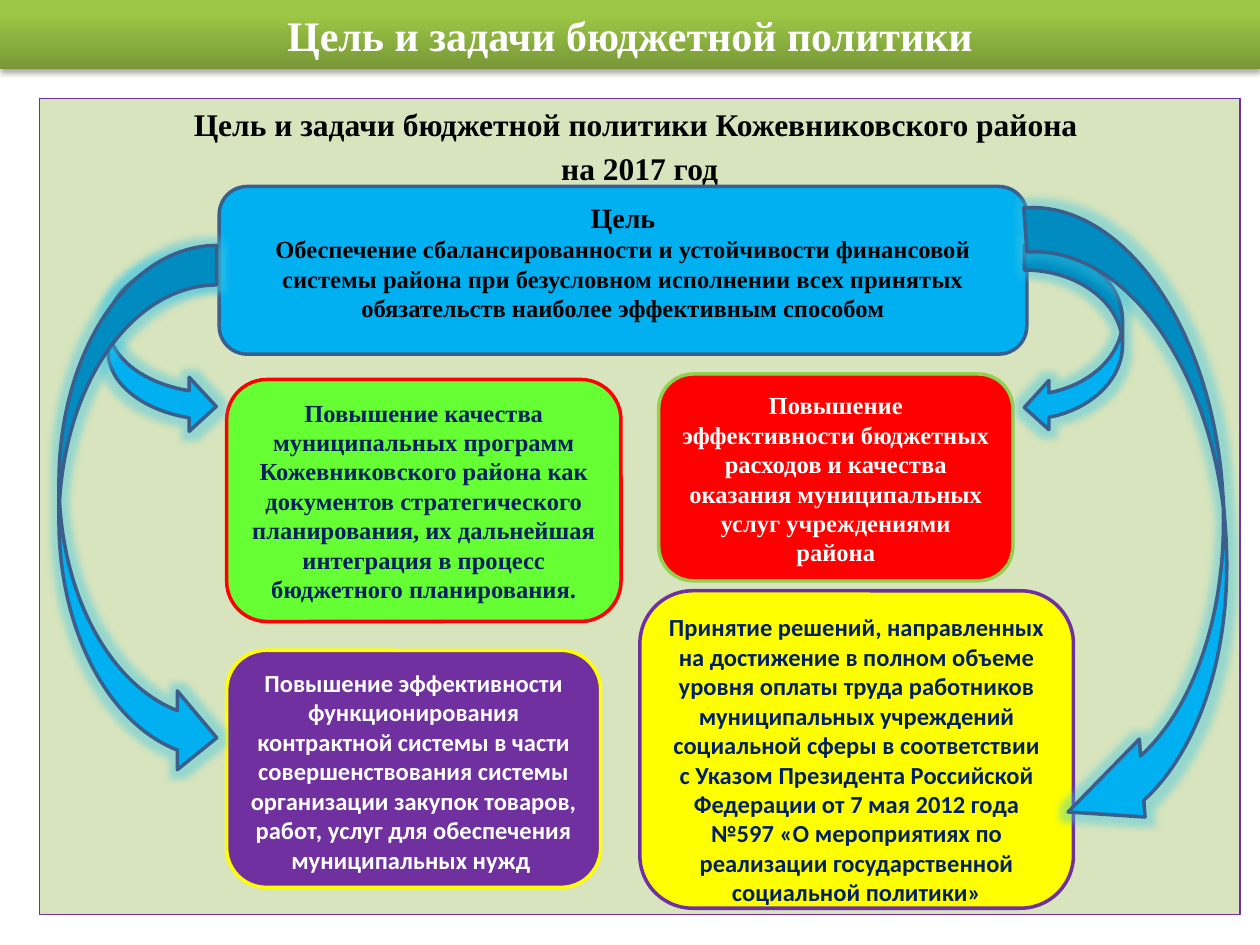
from lxml.etree import SubElement
from pptx import Presentation
from pptx.dml.color import RGBColor
from pptx.enum.shapes import MSO_SHAPE as Preset
from pptx.enum.text import MSO_ANCHOR as Anchor, MSO_AUTO_SIZE as AutoSize, PP_ALIGN as Align
from pptx.oxml.ns import qn
from pptx.util import Cm, Pt

# Theme: colours, fonts and type sizes
THEME = {
    "serif": "Times New Roman", "sans": "Calibri",
    "title": 24, "heading": 18, "goal": 16, "text": 14,
    "white": "FFFFFF", "black": "000000", "navy": "002060",
    "panel": "D7E4BD", "purple": "7030A0", "green": "66FF33", "lime": "92D050",
    "red": "FF0000", "yellow": "FFFF00", "blue": "00B0F0", "outline": "3A5F8C",
    "glow": "33C3E6", "bar_dark": "779737", "bar_light": "9DC746",
}

# Content: boxes are left, top, width, height in centimetres
TITLE = ("Цель и задачи бюджетной политики", (0, 0, 25.4, 1.4))
PANEL = (["Цель и задачи бюджетной политики Кожевниковского района ", "на 2017 год"],
         (0.79, 1.98, 24.21, 16.46))

# Cards: box, fill, line, font, text colour, anchor, [(text, size)]
CARDS = [
    ((4.57, 7.65, 7.95, 4.88), "green", "red", "serif", "navy", Anchor.MIDDLE,
     [("Повышение качества муниципальных программ Кожевниковского района как документов "
       "стратегического планирования, их дальнейшая интеграция в процесс бюджетного "
       "планирования.", "text")]),
    ((4.57, 13.11, 7.54, 4.78), "purple", "yellow", "sans", "white", Anchor.TOP,
     [("Повышение эффективности функционирования контрактной системы в части "
       "совершенствования системы организации закупок товаров, работ, услуг для "
       "обеспечения муниципальных нужд ", "text")]),
    ((13.28, 7.54, 7.14, 4.17), "red", "lime", "serif", "white", Anchor.TOP,
     [("Повышение эффективности бюджетных расходов и качества оказания муниципальных "
       "услуг учреждениями района", "text")]),
    ((12.9, 11.91, 8.74, 6.4), "yellow", "purple", "sans", "navy", Anchor.TOP,
     [("Принятие решений, направленных на достижение в полном объеме уровня оплаты труда "
       "работников муниципальных учреждений социальной сферы в соответствии с Указом "
       "Президента Российской Федерации от 7 мая 2012 года №597 «О мероприятиях по "
       "реализации государственной социальной политики»", "text")]),
    ((4.42, 3.76, 16.28, 3.38), "blue", "outline", "serif", "black", Anchor.TOP,
     [("Цель", "goal"),
      ("Обеспечение сбалансированности и устойчивости финансовой системы района при "
       "безусловном исполнении всех принятых обязательств наиболее эффективным способом",
       "text")]),
]

# Arrows: preset, box, rotation, adjustments
ARROWS = [
    (Preset.CURVED_LEFT_ARROW, (20.65, 4.95, 1.98, 3.76), 0, ()),
    (Preset.CURVED_LEFT_ARROW, (21.11, 4.04, 3.58, 13), 355.8, (0.25, 0.44, 0.43)),
    (Preset.CURVED_RIGHT_ARROW, (2.18, 5.16, 2.18, 3.58), 0, ()),
    (Preset.CURVED_RIGHT_ARROW, (1.19, 4.95, 3.18, 10.72), 0, ()),
]


def color(name):
    return RGBColor.from_string(THEME[name])


def place(shape, box):
    shape.left, shape.top, shape.width, shape.height = (Cm(value) for value in box)


def paint(shape, fill, line, width=2):
    shape.fill.solid()
    shape.fill.fore_color.rgb = color(fill)
    shape.line.color.rgb = color(line)
    shape.line.width = Pt(width)
    shape.shadow.inherit = False


def add_effect(shape, kind, color_name, alpha, **attributes):
    shape.shadow.inherit = False
    effects = shape._element.spPr.find(qn("a:effectLst"))
    effect = SubElement(effects, qn("a:" + kind), attributes)
    tint = SubElement(effect, qn("a:srgbClr"), val=THEME[color_name])
    SubElement(tint, qn("a:alpha"), val=str(alpha * 1000))


def write(shape, lines, font, text_color, anchor, space_before=0):
    frame = shape.text_frame
    frame.word_wrap = True
    frame.auto_size = AutoSize.NONE
    frame.vertical_anchor = anchor
    for index, (text, size) in enumerate(lines):
        paragraph = frame.add_paragraph() if index else frame.paragraphs[0]
        paragraph.alignment = Align.CENTER
        paragraph.space_before = Pt(space_before)
        run = paragraph.add_run()
        run.text = text
        run.font.name = THEME[font]
        run.font.size = Pt(THEME[size])
        run.font.bold = True
        run.font.color.rgb = color(text_color)


def main():
    presentation = Presentation()
    presentation.slide_width, presentation.slide_height = Cm(25.4), Cm(19.05)
    slide = presentation.slides.add_slide(presentation.slide_layouts[1])

    # Title bar
    title = slide.shapes.title
    text, box = TITLE
    place(title, box)
    title.fill.gradient()
    title.fill.gradient_angle = 90
    stops = zip(title.fill.gradient_stops, ((0, "bar_dark"), (0.8, "bar_light")))
    for stop, (position, name) in stops:
        stop.position = position
        stop.color.rgb = color(name)
    title.line.fill.background()
    add_effect(title, "outerShdw", "black", 35, blurRad=str(Pt(3.1)),
               dist=str(Pt(1.8)), dir="5400000", rotWithShape="0")
    write(title, [(text, "title")], "serif", "white", Anchor.MIDDLE)

    # Background panel with heading, without bullets
    panel = slide.placeholders[1]
    lines, box = PANEL
    place(panel, box)
    paint(panel, "panel", "purple", 0.75)
    write(panel, [(line, "heading") for line in lines], "serif", "black", Anchor.TOP, 3.6)
    for paragraph in panel.text_frame.paragraphs:
        properties = paragraph._p.get_or_add_pPr()
        properties.set("marL", "0")
        properties.set("indent", "0")
        SubElement(properties, qn("a:buNone"))

    # Goal and task cards
    for box, fill, line, font, text_color, anchor, lines in CARDS:
        card = slide.shapes.add_shape(Preset.ROUNDED_RECTANGLE, *map(Cm, box))
        paint(card, fill, line)
        write(card, lines, font, text_color, anchor)

    # Glowing arrows from the goal to the tasks
    for preset, box, rotation, adjustments in ARROWS:
        arrow = slide.shapes.add_shape(preset, *map(Cm, box))
        arrow.rotation = rotation
        for index, value in enumerate(adjustments):
            arrow.adjustments[index] = value
        paint(arrow, "blue", "outline")
        add_effect(arrow, "glow", "glow", 40, rad=str(Pt(8)))

    presentation.save("out.pptx")


if __name__ == "__main__":
    main()
